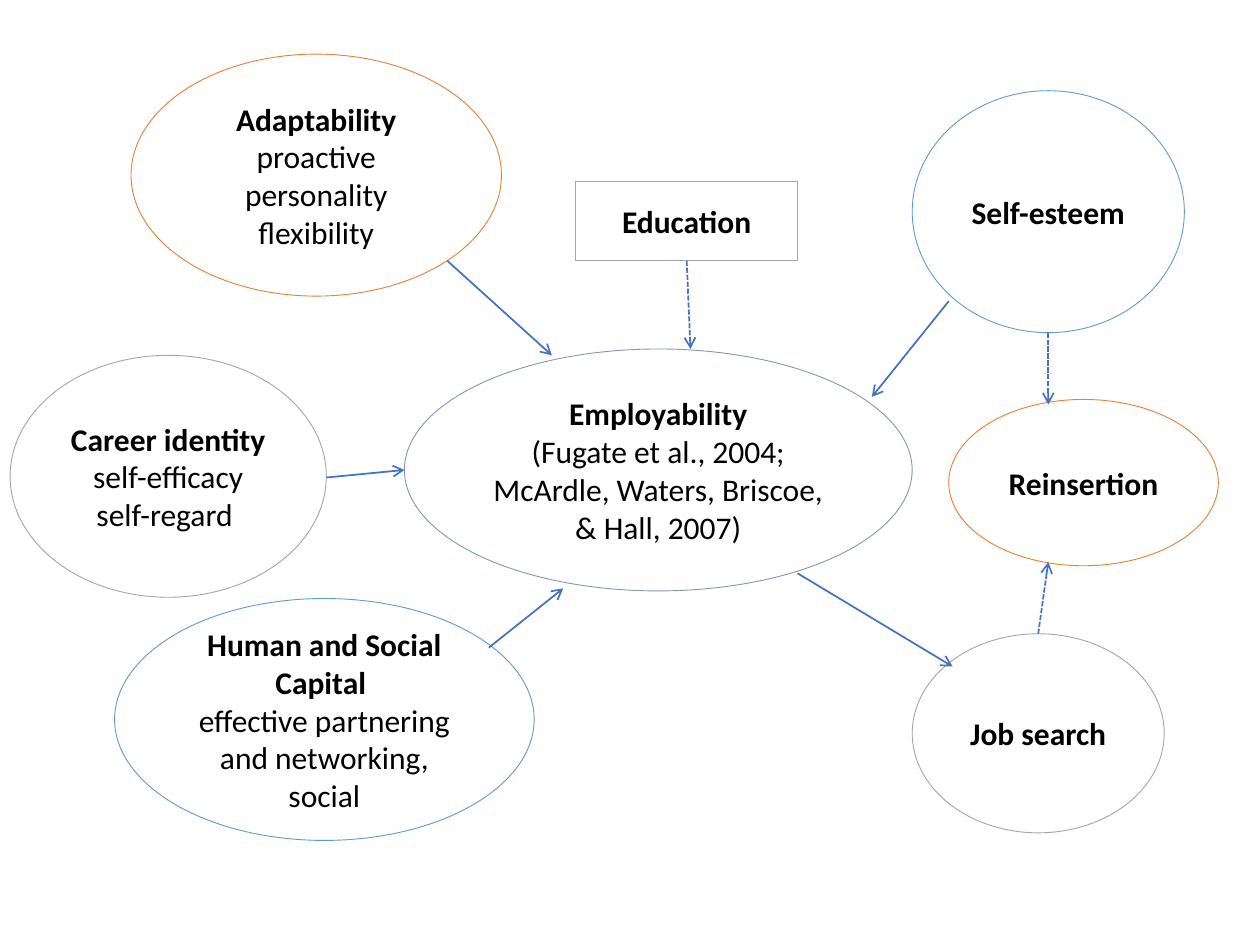
from dataclasses import dataclass

from lxml import etree
from pptx import Presentation
from pptx.dml.color import RGBColor
from pptx.enum.dml import MSO_LINE
from pptx.enum.shapes import MSO_CONNECTOR, MSO_SHAPE
from pptx.enum.text import MSO_ANCHOR, PP_ALIGN
from pptx.oxml.ns import qn
from pptx.util import Inches, Pt

OVAL, RECT = MSO_SHAPE.OVAL, MSO_SHAPE.RECTANGLE
STRAIGHT, DASH = MSO_CONNECTOR.STRAIGHT, MSO_LINE.SQUARE_DOT
MIDDLE, CENTER = MSO_ANCHOR.MIDDLE, PP_ALIGN.CENTER
BOTTOM_SIDE = 2


@dataclass(frozen=True)
class Theme:
    font: str = "Calibri"
    size: float = 18
    text: str = "000000"
    arrow: str = "4472C4"
    orange: str = "ED7D31"
    gray: str = "A5A5A5"
    blue: str = "5B9BD5"
    slate: str = "8497B0"
    outline_width: float = 0.5
    arrow_width: float = 1


T = Theme()
W, H = 10, 7.5
TALL = 1.92

NODES = {
    "adaptability": (OVAL, (1.04, 0.43, 2.94, TALL), T.orange,
                     [[("Adaptability ", True), ("proactive personality flexibility", False)]]),
    "identity": (OVAL, (0.08, 2.82, 2.51, TALL), T.gray,
                 [[("Career identity ", True), ("self-efficacy self-regard ", False)]]),
    "capital": (OVAL, (0.91, 4.75, 3.33, TALL), T.blue,
                [[("Human and Social Capital ", True)],
                 [("effective partnering and networking, social", False)]]),
    "employability": (OVAL, (3.21, 2.77, 4.03, TALL), T.slate,
                      [[("Employability", True)],
                       [("(Fugate et al., 2004; McArdle, Waters, Briscoe, & Hall, 2007)", False)]]),
    "search": (OVAL, (7.24, 5.03, 2, 1.58), T.gray, [[("Job search", True)]]),
    "esteem": (OVAL, (7.24, 0.72, 2.16, TALL), T.blue, [[("Self-esteem", True)]]),
    "reinsertion": (OVAL, (7.53, 3.17, 2.14, 1.32), T.orange, [[("Reinsertion", True)]]),
    "education": (RECT, (4.57, 1.44, 1.76, 0.63), T.gray, [[("Education", True)]]),
}

ARROWS = [
    ((3.55, 2.07), (4.38, 2.82), False),
    ((3.88, 5.14), (4.47, 4.67), False),
    ((7.53, 2.39), (6.92, 3.15), False),
    ((6.33, 4.55), (7.56, 5.29), False),
    ((8.24, 5.03), (8.32, 4.46), True),
    ((8.32, 2.64), (8.32, 3.21), True),
    ((2.59, 3.79), (3.21, 3.73), False),
]
EDUCATION_ARROW = ((5.45, 2.07), (5.48, 2.77), True)


def add_node(s, kind, box, color, paragraphs):
    sp = s.shapes.add_shape(kind, *map(Inches, box))
    sp.shadow.inherit = False
    sp.fill.background()
    sp.line.color.rgb = RGBColor.from_string(color)
    sp.line.width = Pt(T.outline_width)
    tf = sp.text_frame
    tf.word_wrap = True
    tf.vertical_anchor = MIDDLE
    for i, runs in enumerate(paragraphs):
        p = tf.add_paragraph() if i else tf.paragraphs[0]
        p.alignment = CENTER
        p.font.name = T.font
        p.font.size = Pt(T.size)
        p.font.color.rgb = RGBColor.from_string(T.text)
        for text, bold in runs:
            r = p.add_run()
            r.text = text
            r.font.bold = bold
    return sp


def add_arrow(s, start, end, dashed):
    cx = s.shapes.add_connector(STRAIGHT, *map(Inches, start + end))
    cx.line.color.rgb = RGBColor.from_string(T.arrow)
    cx.line.width = Pt(T.arrow_width)
    if dashed:
        cx.line.dash_style = DASH
    etree.SubElement(cx.line._get_or_add_ln(), qn("a:tailEnd"), type="arrow")
    etree.SubElement(cx._element.spPr, qn("a:effectLst"))
    return cx


def main():
    prs = Presentation()
    prs.slide_width, prs.slide_height = Inches(W), Inches(H)
    s = prs.slides.add_slide(prs.slide_layouts[6])
    nodes = {name: add_node(s, *node) for name, node in NODES.items()}
    for arrow in ARROWS:
        add_arrow(s, *arrow)
    cx = add_arrow(s, *EDUCATION_ARROW)
    cx.begin_connect(nodes["education"], BOTTOM_SIDE)
    prs.save("out.pptx")


if __name__ == "__main__":
    main()
